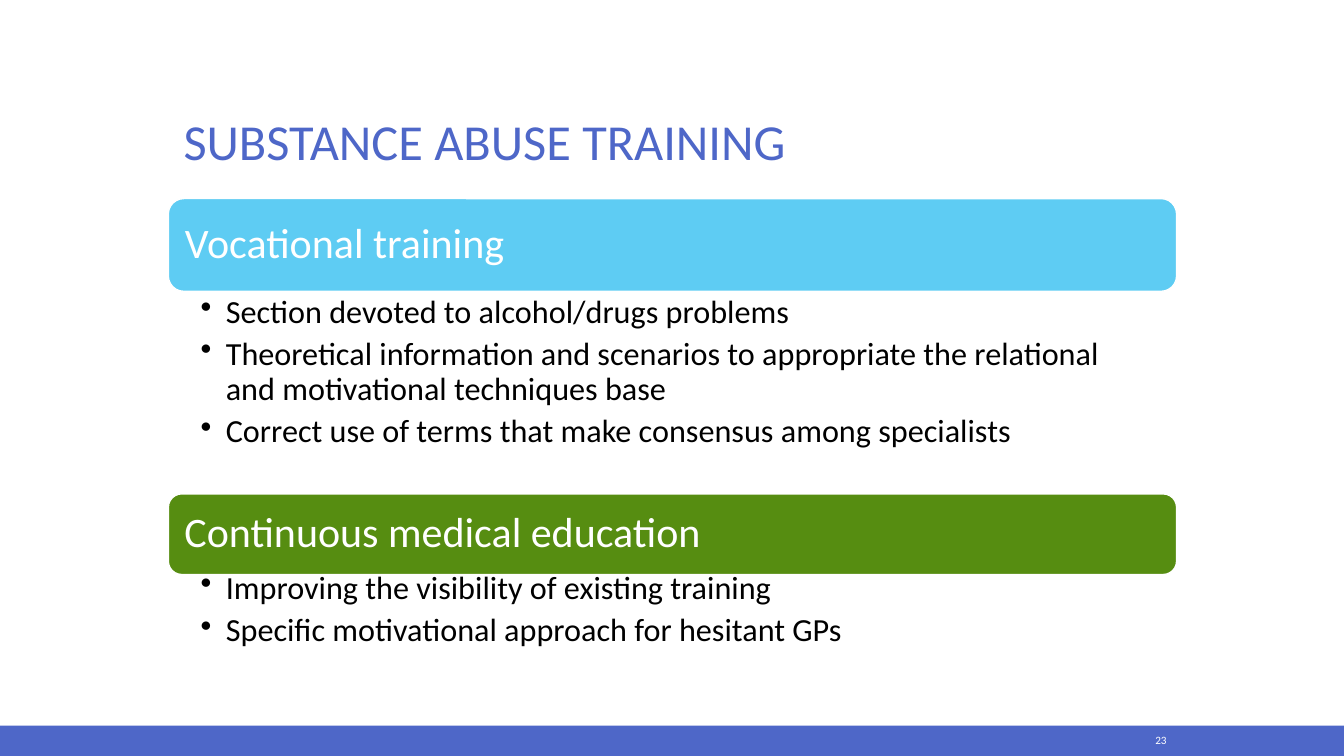
from dataclasses import dataclass

from lxml.etree import SubElement
from pptx import Presentation
from pptx.dml.color import RGBColor as RGB
from pptx.enum.shapes import MSO_SHAPE as SHAPE
from pptx.enum.text import MSO_ANCHOR as ANCHOR, MSO_AUTO_SIZE as FIT, PP_ALIGN as ALIGN
from pptx.oxml.ns import qn
from pptx.util import Inches, Pt


@dataclass(frozen=True)
class Theme:
    font: str = "Calibri"
    accent: str = "4E67C8"
    sky: str = "5ECCF3"
    green: str = "568D11"
    light: str = "FFFFFF"
    dark: str = "000000"
    title: int = 36
    header: int = 30
    body: int = 23
    number: int = 8


THEME = Theme()
LEFT, WIDTH = 1.67, 10
SECTIONS = [
    ("Vocational training", THEME.sky, (1.97, 0.92), (2.89, 1.94), [
        "Section devoted to alcohol/drugs problems",
        "Theoretical information and scenarios to appropriate the relational "
        "and motivational techniques base",
        "Correct use of terms that make consensus among specialists",
    ]),
    ("Continuous medical education", THEME.green, (4.9, 0.8), (5.63, 1.03), [
        "Improving the visibility of existing training",
        "Specific motivational approach for hesitant GPs",
    ]),
]


class SlideBuilder:
    def __init__(self, slide, theme):
        self.s = slide
        self.theme = theme

    def frame(self, sp, insets, anchor):
        tf = sp.text_frame
        tf.word_wrap = True
        tf.auto_size = FIT.NONE
        tf.vertical_anchor = anchor
        tf.margin_left, tf.margin_top, tf.margin_right, tf.margin_bottom = map(Inches, insets)
        return tf

    def add_text(self, p, text, size, color, align=ALIGN.LEFT, spacing=0.9):
        p.alignment = align
        p.line_spacing = spacing
        r = p.add_run()
        r.text = text
        r.font.name = self.theme.font
        r.font.size = Pt(size)
        r.font.color.rgb = RGB.from_string(color)

    def indent(self, p, left, first):
        pPr = p._p.get_or_add_pPr()
        pPr.set("marL", str(Inches(left)))
        pPr.set("indent", str(Inches(first)))
        return pPr

    def shape(self, kind, box, fill, line=None):
        sp = self.s.shapes.add_shape(kind, *map(Inches, box))
        sp.shadow.inherit = False
        sp.fill.solid()
        sp.fill.fore_color.rgb = RGB.from_string(fill)
        if line:
            sp.line.color.rgb = RGB.from_string(line)
            sp.line.width = Pt(1)
        else:
            sp.line.fill.background()
        return sp

    def title(self, text, box):
        sp = self.s.shapes.title
        sp.left, sp.top, sp.width, sp.height = map(Inches, box)
        p = self.frame(sp, (0.1, 0.05, 0.1, 0.05), ANCHOR.BOTTOM).paragraphs[0]
        self.indent(p, 0.05, 0)
        self.add_text(p, text, self.theme.title, self.theme.accent)

    def header(self, text, box, fill):
        sp = self.shape(SHAPE.ROUNDED_RECTANGLE, box, fill, self.theme.light)
        tf = self.frame(sp, (0.12, 0.12, 0.12, 0.12), ANCHOR.MIDDLE)
        self.add_text(tf.paragraphs[0], text, self.theme.header, self.theme.light)

    def bullets(self, items, box):
        sp = self.s.shapes.add_textbox(*map(Inches, box))
        tf = self.frame(sp, (0.32, 0.04, 0.23, 0.04), ANCHOR.TOP)
        for i, item in enumerate(items):
            p = tf.add_paragraph() if i else tf.paragraphs[0]
            self.add_text(p, item, self.theme.body, self.theme.dark)
            p.space_after = Pt(5.5)
            SubElement(self.indent(p, 0.25, -0.25), qn("a:buChar")).set("char", "•")

    def number(self, text, box):
        sp = self.s.shapes.add_textbox(*map(Inches, box))
        tf = self.frame(sp, (0.1, 0.05, 0.1, 0.05), ANCHOR.MIDDLE)
        self.add_text(tf.paragraphs[0], text, self.theme.number, self.theme.light, ALIGN.RIGHT, 1.0)


def main():
    prs = Presentation()
    prs.slide_width, prs.slide_height = Inches(13.33), Inches(7.5)
    slide = SlideBuilder(prs.slides.add_slide(prs.slide_layouts[5]), THEME)
    slide.shape(SHAPE.RECTANGLE, (0, 7.2, 13.33, 0.3), THEME.accent)
    slide.title("SUBSTANCE ABUSE TRAINING", (LEFT, 0.5, WIDTH, 1.25))
    for heading, fill, (head_top, head_h), (list_top, list_h), items in SECTIONS:
        slide.header(heading, (LEFT, head_top, WIDTH, head_h), fill)
        slide.bullets(items, (LEFT, list_top, WIDTH, list_h))
    slide.number("23", (10.82, 7.22, 0.85, 0.25))
    prs.save("out.pptx")


if __name__ == "__main__":
    main()
